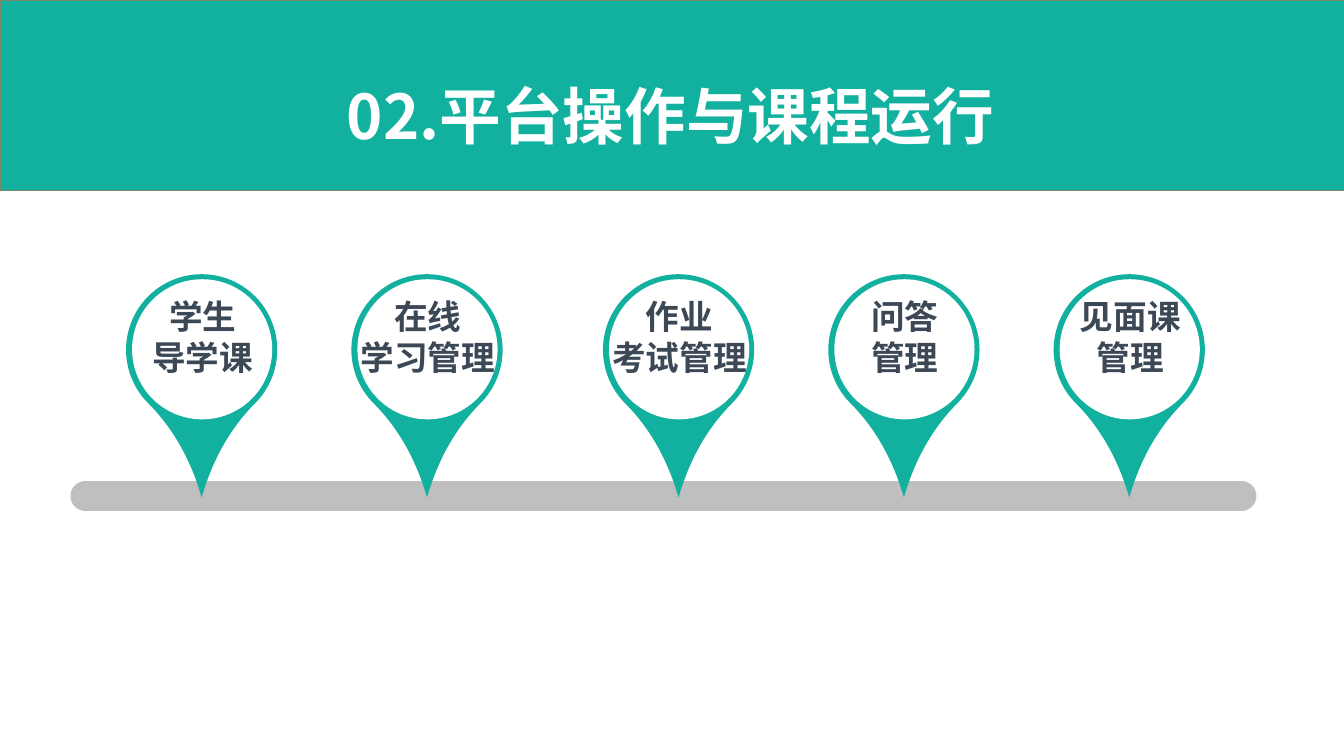
from lxml import etree
from pptx import Presentation
from pptx.dml.color import RGBColor
from pptx.enum.shapes import MSO_CONNECTOR, MSO_SHAPE
from pptx.enum.text import MSO_ANCHOR, MSO_AUTO_SIZE, PP_ALIGN
from pptx.oxml.ns import qn
from pptx.util import Inches, Pt

TEAL, GREY, DARK, WHITE = "12B19F", "BFBFBF", "3C4856", "FFFFFF"
FONT = "Noto Sans CJK SC"
PIN_SIZE, PIN_TOP, PIN_STEP = 1.5, 2.72, 2.235
LEFT_GROUP = ["学生\n导学课", "在线\n学习管理"]
RIGHT_GROUP = ["作业\v考试管理", "问答\n管理", "见面课\v管理"]


def color(value):
    """Turn a hex string into a colour."""
    return RGBColor.from_string(value)


def write(box, text, size=24, fill=DARK, align=PP_ALIGN.CENTER, wrap=True):
    """Fill a text box with bold, formatted paragraphs."""
    frame = box.text_frame
    frame.text = text
    frame.word_wrap = wrap
    frame.auto_size = MSO_AUTO_SIZE.SHAPE_TO_FIT_TEXT
    frame.vertical_anchor = MSO_ANCHOR.TOP
    for para in frame.paragraphs:
        para.alignment = align
        for span in para.runs:
            span.font.size = Pt(size)
            span.font.bold = True
            span.font.name = FONT
            span.font.color.rgb = color(fill)
    for latin in list(box.element.iter(qn("a:latin"))):
        east_asian = etree.Element(qn("a:ea"), typeface=FONT)
        latin.addnext(east_asian)


def add_filled(page, kind, left, top, width, height, fill):
    """Add a flat shape without an outline."""
    shape = page.shapes.add_shape(
        kind, Inches(left), Inches(top), Inches(width), Inches(height))
    shape.shadow.inherit = False
    shape.fill.solid()
    shape.fill.fore_color.rgb = color(fill)
    shape.line.fill.background()
    return shape


def add_track(page, left, right, y):
    """Draw the thick rounded line that the pins stand on."""
    track = page.shapes.add_connector(
        MSO_CONNECTOR.STRAIGHT, Inches(left), Inches(y), Inches(right), Inches(y))
    track.line.color.rgb = color(GREY)
    track.line.width = Pt(21.75)
    track.line.fill  
    properties = track.element.spPr
    properties.find(qn("a:ln")).set("cap", "rnd")
    etree.SubElement(properties, qn("a:effectLst"))


def add_header(page, width, height, text):
    """Draw the banner and set the title on it."""
    banner = add_filled(page, MSO_SHAPE.RECTANGLE, 0, 0, width, height, TEAL)
    banner.line.color.rgb = color("7A866C")
    banner.line.width = Pt(1)
    title = page.shapes.title
    title.left, title.top = Inches(3.34), Inches(0.72)
    title.width, title.height = Inches(6.8), Inches(0.84)
    write(title, text, size=44, fill=WHITE, align=PP_ALIGN.LEFT, wrap=False)
    page.shapes.element.append(title.element)


def add_pin(page, left, top, label):
    """Draw one map pin with its label."""
    drop = add_filled(page, MSO_SHAPE.TEAR, left, top, PIN_SIZE, PIN_SIZE, TEAL)
    drop.adjustments[0] = 1.381
    drop.rotation = 135
    add_filled(page, MSO_SHAPE.OVAL, left + 0.06, top + 0.05, 1.39, 1.39, WHITE)
    box = page.shapes.add_textbox(
        Inches(left - 0.05), Inches(top + 0.17), Inches(1.62), Inches(0.91))
    write(box, label)


def add_pin_group(page, left, top, labels):
    """Draw a row of evenly spaced pins."""
    for index, label in enumerate(labels):
        add_pin(page, left + index * PIN_STEP, top, label)


def main():
    """Build and save the slide."""
    deck = Presentation()
    deck.slide_width, deck.slide_height = Inches(13.33), Inches(7.5)
    page = deck.slides.add_slide(deck.slide_layouts[5])
    add_track(page, 0.85, 12.31, 4.92)
    add_header(page, 13.33, 1.89, "02.平台操作与课程运行")
    add_pin_group(page, 1.25, PIN_TOP, LEFT_GROUP)
    add_pin_group(page, 5.98, PIN_TOP, RIGHT_GROUP)
    deck.save("out.pptx")


if __name__ == "__main__":
    main()
